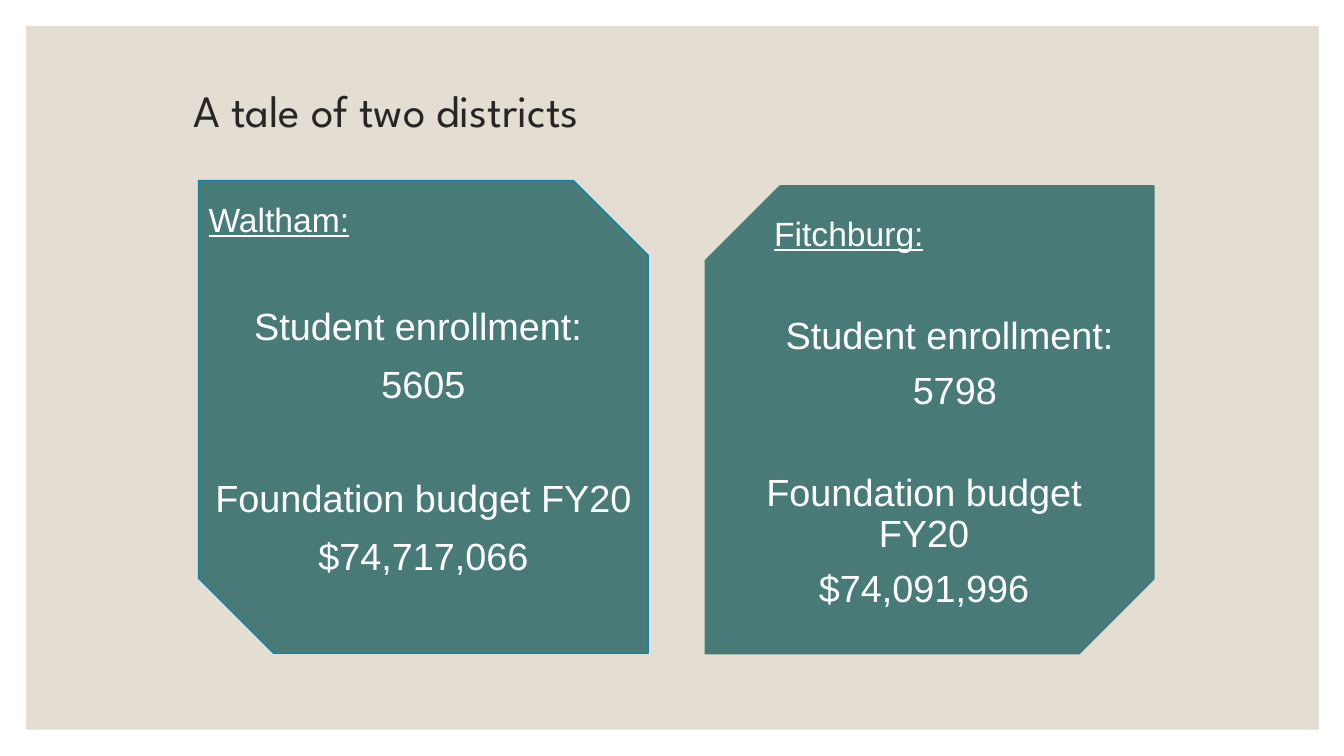
from pptx import Presentation
from pptx.dml.color import RGBColor
from pptx.enum.shapes import MSO_SHAPE as Shape
from pptx.enum.text import MSO_ANCHOR as Anchor, PP_ALIGN as Align
from pptx.util import Inches, Pt

SAND = RGBColor(0xE3, 0xDE, 0xD1)
TEAL = RGBColor(0x48, 0x7B, 0x78)
BLUE = RGBColor(0x15, 0x80, 0xA9)
DARK = RGBColor(0x26, 0x26, 0x26)
WHITE = RGBColor(0xFF, 0xFF, 0xFF)


class Deck:
    title_font = "League Spartan"
    body_font = "Arial"

    def __init__(self):
        self.prs = Presentation()
        self.prs.slide_width = Inches(13.33)
        self.prs.slide_height = Inches(7.5)
        self.s = self.prs.slides.add_slide(self.prs.slide_layouts[6])

    def panel(self, kind, box, fill, line=None, rotation=0):
        sp = self.s.shapes.add_shape(kind, *map(Inches, box))
        sp.shadow.inherit = False
        sp.rotation = rotation
        sp.fill.solid()
        sp.fill.fore_color.rgb = fill
        if line is None:
            sp.line.fill.background()
        else:
            sp.line.color.rgb = line
            sp.line.width = Pt(1)

    def text_box(self, box, anchor=Anchor.TOP):
        tf = self.s.shapes.add_textbox(*map(Inches, box)).text_frame
        tf.word_wrap = True
        tf.vertical_anchor = anchor
        return tf

    def style(self, p, size, font, color, underline=False):
        for r in p.runs:
            r.font.size = Pt(size)
            r.font.name = font
            r.font.color.rgb = color
            r.font.underline = underline

    def title(self, text, box):
        p = self.text_box(box, Anchor.MIDDLE).paragraphs[0]
        p.text = text
        p.line_spacing = 0.9
        self.style(p, 32, self.title_font, DARK)

    def facts(self, box, lines, line_spacing, gap):
        tf = self.text_box(box)
        for i, (text, is_name, extra) in enumerate(lines):
            p = tf.add_paragraph() if i else tf.paragraphs[0]
            p.text = text
            p.alignment = Align.LEFT if is_name else Align.CENTER
            p.line_spacing = line_spacing
            p.space_before = Pt(gap + extra)
            self.style(p, 24 if is_name else 27, self.body_font, WHITE, is_name)


def enrollment(district, count, extra):
    return [(district, True, 0), ("Student enrollment: ", False, extra), (count, False, 0)]


def budget(amount, extra=0):
    return [("Foundation budget FY20", False, extra), (amount, False, 0)]


def main():
    deck = Deck()
    deck.panel(Shape.RECTANGLE, (0.26, 0.26, 12.82, 6.98), SAND)
    deck.panel(Shape.SNIP_2_DIAG_RECTANGLE, (1.97, 1.79, 4.46, 4.69), TEAL, BLUE)
    deck.panel(Shape.SNIP_2_DIAG_RECTANGLE, (6.9, 1.94, 4.64, 4.45), TEAL, TEAL, 90)
    deck.title("A tale of two districts", (1.82, 0.4, 8.16, 1.45))

    waltham = enrollment("Waltham:", "5605", 36.5) + budget("$74,717,066", 40)
    deck.facts((1.97, 1.92, 4.46, 4.57), waltham, 1.0, 9)
    deck.facts((7.58, 2.11, 3.78, 2.07), enrollment("Fitchburg:", "5798", 35), 0.9, 10)
    deck.facts((7.15, 4.65, 4.03, 1.48), budget("$74,091,996"), 0.9, 10)
    deck.prs.save("out.pptx")


if __name__ == "__main__":
    main()
